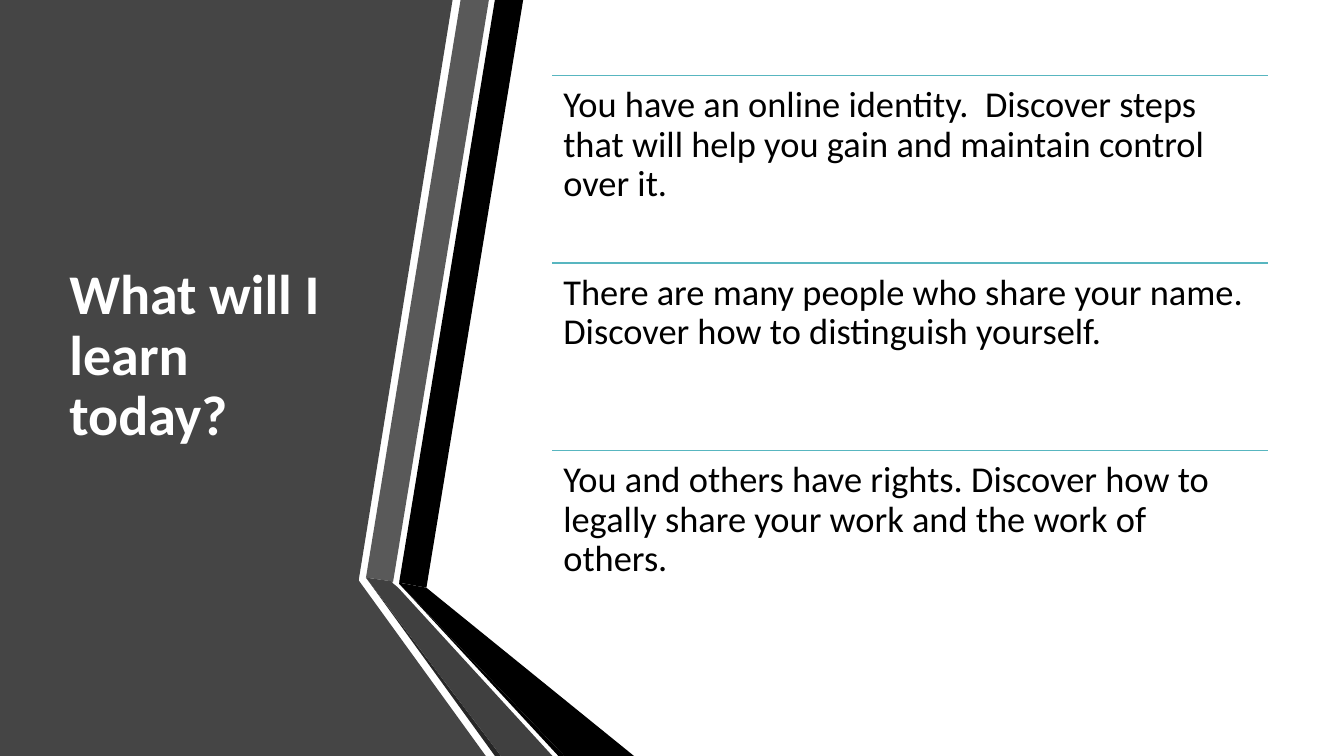
from pptx import Presentation
from pptx.dml.color import RGBColor
from pptx.enum.shapes import MSO_CONNECTOR as Connector
from pptx.enum.text import MSO_ANCHOR as Anchor
from pptx.util import Pt
from lxml.etree import SubElement

DRAWING_NS = "http://schemas.openxmlformats.org/drawingml/2006/main"
WIDTH, HEIGHT = 960, 540


def color(hex_string):
    return RGBColor.from_string(hex_string)


class SlideBuilder:
    font = "Calibri"
    line_spacing = 0.9
    rule_color = "58B6C0"

    def __init__(self, slide):
        self.slide = slide
        background = slide.background.fill
        background.solid()
        background.fore_color.rgb = color("FFFFFF")

    def polygon(self, points, fill):
        start, *rest = [(Pt(x), Pt(y)) for x, y in points]
        builder = self.slide.shapes.build_freeform(*start, scale=1.0)
        builder.add_line_segments(rest, close=True)
        outline = builder.convert_to_shape()
        outline.shadow.inherit = False
        outline.fill.solid()
        outline.fill.fore_color.rgb = color(fill)
        outline.line.fill.background()

    def rule(self, left, top, width):
        line = self.slide.shapes.add_connector(
            Connector.STRAIGHT, Pt(left), Pt(top), Pt(left + width), Pt(top))
        line.line.color.rgb = color(self.rule_color)
        line.line.width = Pt(1)
        SubElement(line._element.spPr, f"{{{DRAWING_NS}}}effectLst")

    def text(self, words, box, size, fill, bold=False,
             anchor=Anchor.TOP, insets=(7.2, 3.6)):
        frame = self.slide.shapes.add_textbox(*map(Pt, box)).text_frame
        frame.word_wrap = True
        frame.vertical_anchor = anchor
        frame.margin_left = frame.margin_right = Pt(insets[0])
        frame.margin_top = frame.margin_bottom = Pt(insets[1])
        paragraph = frame.paragraphs[0]
        paragraph.line_spacing = self.line_spacing
        run = paragraph.add_run()
        run.text = words
        run.font.name = self.font
        run.font.size = Pt(size)
        run.font.bold = bold
        run.font.color.rgb = color(fill)


RIBBONS = [
    ("454545", [(0, 0), (323.3, 0), (256.3, 414), (256.3, 414.7),
                (347, HEIGHT), (0, HEIGHT)]),
    ("000000", [(285.1, 416.2), (304.6, 419.8), (373.7, 0), (353.5, 0)]),
    ("595959", [(349.2, 0), (329, 0), (261.4, 412.6), (280.8, 415.4)]),
    ("262626", [(261.4, 412.6), (353.5, HEIGHT), (357.8, HEIGHT)]),
    ("000000", [(285.1, 416.9), (398.9, HEIGHT), (403.2, HEIGHT)]),
    ("000000", [(285.1, 416.9), (403.2, HEIGHT), (452.9, HEIGHT),
                (304.6, 419.8), (285.1, 416.2)]),
    ("404040", [(394.6, HEIGHT), (284.4, 419.8), (280.1, 416.2),
                (280.8, 415.4), (261.4, 412.6), (357.8, HEIGHT)]),
]
GOALS = [
    "You have an online identity.  Discover steps that will help you gain "
    "and maintain control over it.",
    "There are many people who share your name. Discover how to distinguish "
    "yourself.",
    "You and others have rights. Discover how to legally share your work "
    "and the work of others.",
]
GOALS_LEFT, GOALS_TOP, GOALS_WIDTH, GOAL_HEIGHT = 394.6, 54, 511.2, 133.9


def main():
    deck = Presentation()
    deck.slide_width, deck.slide_height = Pt(WIDTH), Pt(HEIGHT)
    builder = SlideBuilder(deck.slides.add_slide(deck.slide_layouts[6]))
    for fill, points in RIBBONS:
        builder.polygon(points, fill)
    builder.text("What will I learn today?", (42.5, 54, 218.9, 401.8), 40,
                 "FFFFFF", bold=True, anchor=Anchor.MIDDLE)
    for index, goal in enumerate(GOALS):
        top = GOALS_TOP + index * GOAL_HEIGHT
        builder.rule(GOALS_LEFT, top, GOALS_WIDTH)
        builder.text(goal, (GOALS_LEFT, top, GOALS_WIDTH, GOAL_HEIGHT), 26,
                     "000000", insets=(7.8, 7.8))
    deck.save("out.pptx")


if __name__ == "__main__":
    main()
